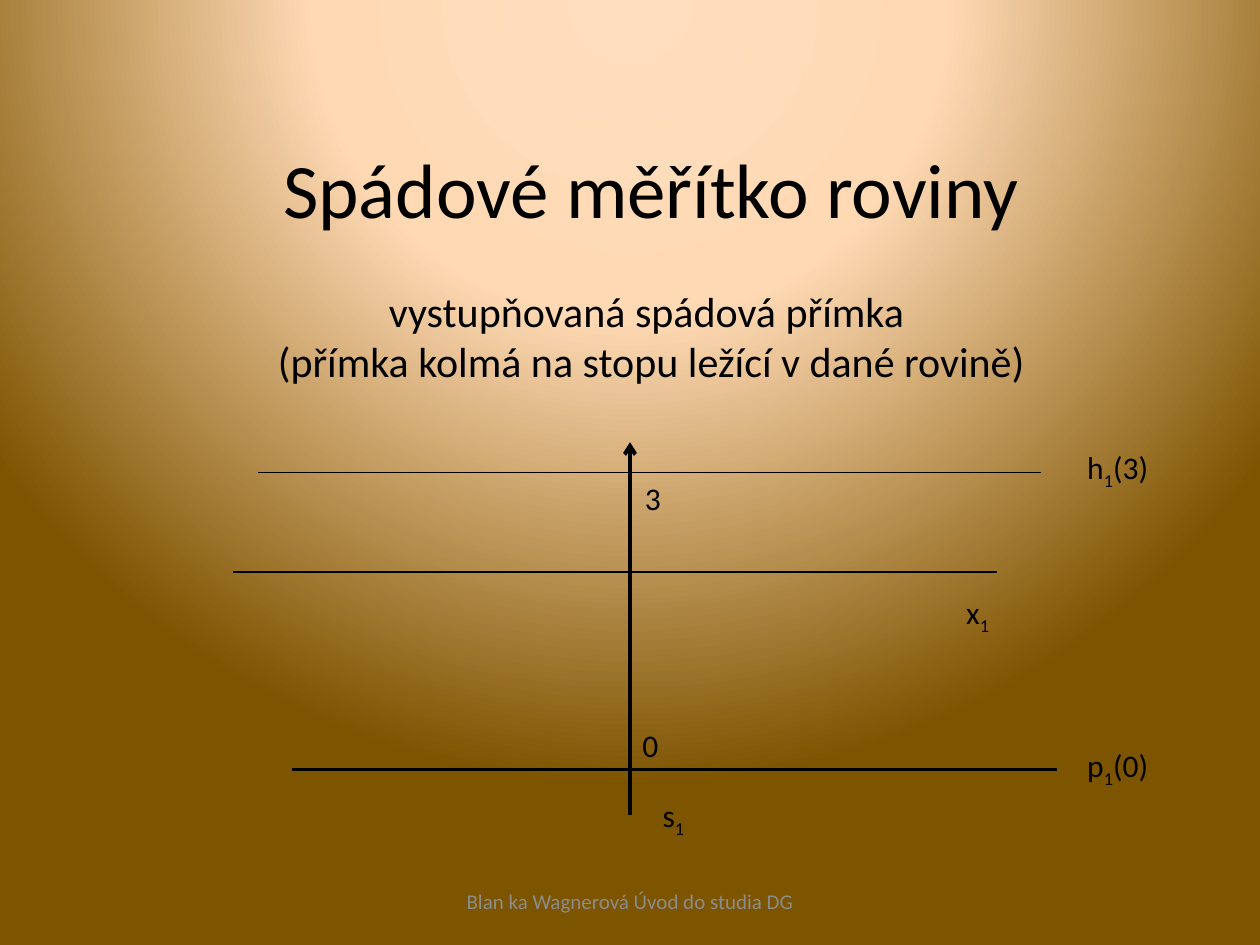
from pptx import Presentation
from pptx.dml.color import RGBColor
from pptx.enum.shapes import MSO_CONNECTOR
from pptx.enum.text import MSO_ANCHOR, MSO_AUTO_SIZE, PP_ALIGN
from pptx.oxml import parse_xml
from pptx.oxml.ns import nsdecls
from pptx.util import Pt

STRAIGHT = MSO_CONNECTOR.STRAIGHT
MIDDLE, TOP = MSO_ANCHOR.MIDDLE, MSO_ANCHOR.TOP
CENTER, LEFT = PP_ALIGN.CENTER, PP_ALIGN.LEFT
NO_FIT = MSO_AUTO_SIZE.NONE
FONT, BLACK, GRAY = "Calibri", "000000", "8C8C8C"
TITLE_ONLY = 5

# Circular gradient: (position in percent, colour)
GRADIENT = [(0, "FFDEBF"), (40, "FFD9B4"), (100, "7D5400")]

# Horizontal lines of the construction: left, right, height, weight
LEVEL_LINES = [
    (147.6, 594.7, 270, 1),
    (133.2, 569.5, 326.9, 0.75),
    (167, 604.1, 439.9, 1.5),
]

# Labels: left, top, width, letter, subscript, rest
LABELS = [
    (545, 335.5, 34, "x", "1", ""),
    (371.5, 451.4, 34, "s", "1", ""),
    (614.2, 422.6, 62.6, "p", "1", "(0)"),
    (614.2, 252.7, 62.6, "h", "1", "(3)"),
    (361.4, 270, 31, "3", "", ""),
    (360, 411.1, 31, "0", "", ""),
]
LABEL_HEIGHT = 29


def color(hex_text):
    return RGBColor.from_string(hex_text)


def paint_background(page):
    stops = "".join(
        f'<a:gs pos="{position * 1000}"><a:srgbClr val="{shade}"/></a:gs>'
        for position, shade in GRADIENT
    )
    background = parse_xml(
        f'<p:bg {nsdecls("p", "a")}><p:bgPr><a:gradFill rotWithShape="1">'
        f'<a:gsLst>{stops}</a:gsLst><a:path path="circle">'
        '<a:fillToRect l="50000" t="-80000" r="50000" b="180000"/></a:path>'
        "</a:gradFill><a:effectLst/></p:bgPr></p:bg>"
    )
    page.element.cSld.insert(0, background)


def add_span(para, text, size=18, shade=BLACK, subscript=False):
    span = para.add_run()
    span.text = text
    span.font.name = FONT
    span.font.size = Pt(size)
    span.font.color.rgb = color(shade)
    if subscript:
        span.font._element.set("baseline", "-25000")


def place(shape, left, top, width, height):
    shape.left, shape.top = Pt(left), Pt(top)
    shape.width, shape.height = Pt(width), Pt(height)


def fill_title(page):
    title = page.shapes.title
    place(title, 48.2, 31.7, 648, 238.3)
    frame = title.text_frame
    frame.auto_size = NO_FIT
    frame.vertical_anchor = MIDDLE
    lines = [
        ("Spádové měřítko roviny", 44, 29.3),
        ("vystupňovaná spádová přímka ", 24, 0),
        ("(přímka kolmá na stopu ležící v dané rovině)", 24, 0),
    ]
    for index, (text, size, gap) in enumerate(lines):
        para = frame.add_paragraph() if index else frame.paragraphs[0]
        para.alignment = CENTER
        para.space_after = Pt(gap)
        add_span(para, text, size=size)


def add_box(page, left, top, width, height, anchor=TOP, align=LEFT):
    """Add a text box and return its first paragraph."""
    box = page.shapes.add_textbox(Pt(left), Pt(top), Pt(width), Pt(height))
    box.text_frame.word_wrap = True
    box.text_frame.vertical_anchor = anchor
    para = box.text_frame.paragraphs[0]
    para.alignment = align
    return para


def add_label(page, left, top, width, letter, subscript, rest):
    para = add_box(page, left, top, width, LABEL_HEIGHT)
    add_span(para, letter)
    if subscript:
        add_span(para, subscript, subscript=True)
    if rest:
        add_span(para, rest)


def add_line(page, x1, y1, x2, y2, weight, arrow=False):
    line = page.shapes.add_connector(STRAIGHT, Pt(x1), Pt(y1), Pt(x2), Pt(y2))
    line.line.color.rgb = color(BLACK)
    line.line.width = Pt(weight)
    if arrow:
        head = parse_xml(f'<a:headEnd {nsdecls("a")} type="arrow"/>')
        line.line._get_or_add_ln().append(head)
    line._element.spPr.append(parse_xml(f'<a:effectLst {nsdecls("a")}/>'))


def main():
    deck = Presentation()
    deck.slide_width, deck.slide_height = Pt(720), Pt(540)
    page = deck.slides.add_slide(deck.slide_layouts[TITLE_ONLY])
    paint_background(page)
    fill_title(page)

    # Footer
    footer = add_box(page, 246, 500.5, 228, 28.75, anchor=MIDDLE, align=CENTER)
    add_span(footer, "Blan ka Wagnerová Úvod do studia DG", size=12, shade=GRAY)

    # Construction: level lines and the slope line crossing them
    for left, right, height, weight in LEVEL_LINES:
        add_line(page, left, height, right, height, weight)
    add_line(page, 360, 252.7, 360, 465.8, 2.25, arrow=True)

    for label in LABELS:
        add_label(page, *label)

    deck.save("out.pptx")


if __name__ == "__main__":
    main()
